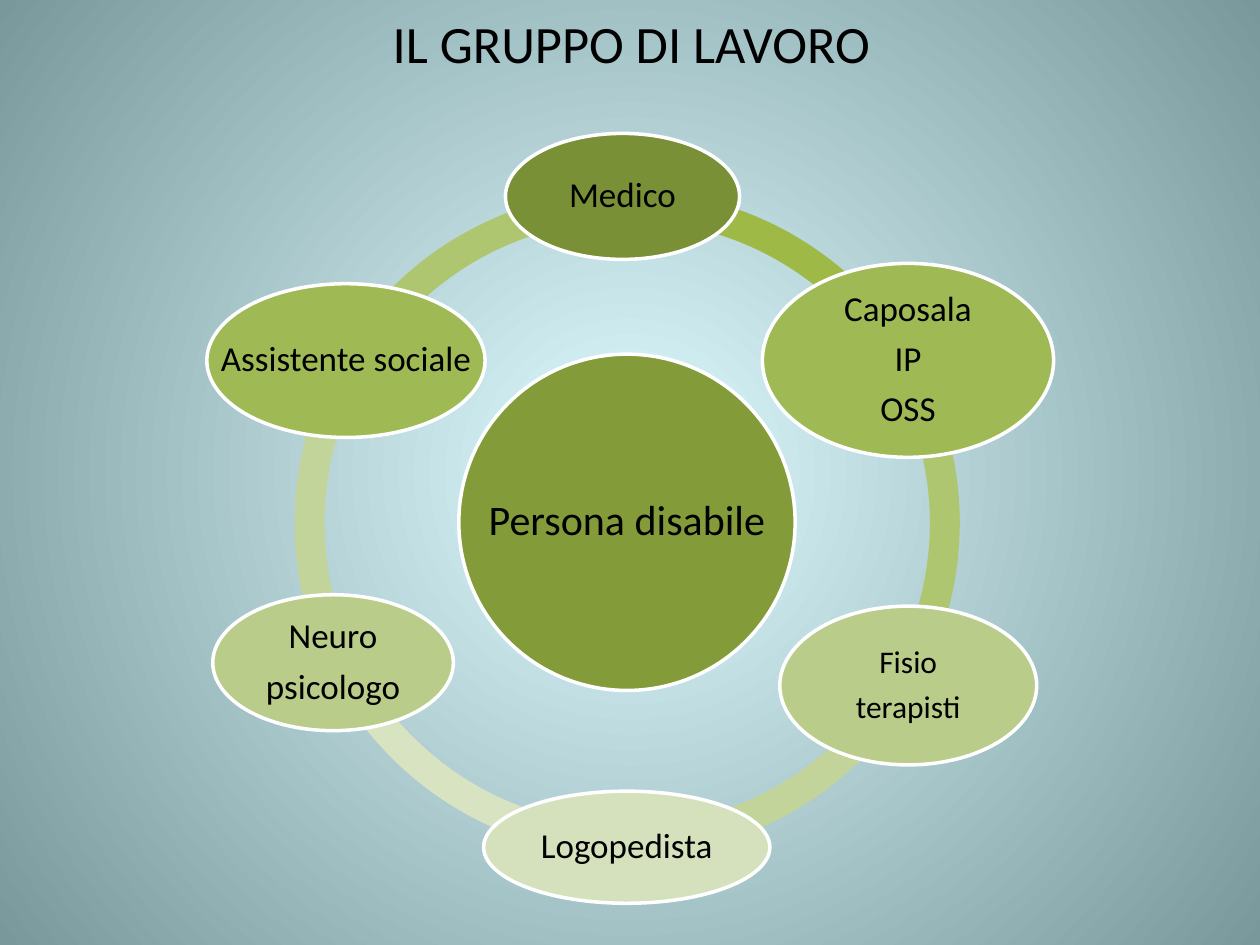
import pptx
import pptx.util
import pptx.dml.color
import pptx.enum.shapes
import pptx.enum.text
import pptx.oxml
import pptx.oxml.ns
from pptx.util import Cm

COLOURS = {
    "text": "000000", "outline": "FFFFFF",
    "glow": "DEFBFF", "edge": "79989C",
    "centre": "849B3A", "dark": "7A9036", "medium": "9FBA54",
    "light": "B9CC89", "pale": "D5E1BD",
    "arc1": "9EB946", "arc2": "AFC670", "arc3": "C3D49A", "arc4": "D8E3C2",
}
FRAME_FORMAT = {
    "margin_left": Cm(0.08), "margin_right": Cm(0.08),
    "margin_top": Cm(0.08), "margin_bottom": Cm(0.08),
    "vertical_anchor": pptx.enum.text.MSO_ANCHOR.MIDDLE,
    "word_wrap": False,
}
SHAPES = pptx.enum.shapes.MSO_SHAPE


def colour(name):
    return pptx.dml.color.RGBColor.from_string(COLOURS[name])


def apply(target, values):
    for name, value in values.items():
        setattr(target, name, value)


class GroupSlide:
    def __init__(self, page, font="Calibri"):
        self.page = page
        self.font = font

    def background(self):
        fill = self.page.background.fill
        fill.gradient()
        for stop, name in zip(fill.gradient_stops, ("glow", "edge")):
            stop.color.rgb = colour(name)
        # Turn the linear gradient into a circular one
        gradient = self.page.background._cSld.find(".//" + pptx.oxml.ns.qn("a:gradFill"))
        gradient.remove(gradient.find(pptx.oxml.ns.qn("a:lin")))
        gradient.append(pptx.oxml.parse_xml(
            f'<a:path {pptx.oxml.ns.nsdecls("a")} path="circle">'
            '<a:fillToRect l="50000" t="50000" r="50000" b="50000"/></a:path>'))

    def fill_text(self, frame, lines, size, para_format):
        apply(frame, FRAME_FORMAT)
        frame.text = "\n".join(lines)
        for para in frame.paragraphs:
            apply(para, {"alignment": pptx.enum.text.PP_ALIGN.CENTER, **para_format})
            for span in para.runs:
                apply(span.font, {"name": self.font, "size": pptx.util.Pt(size)})
                span.font.color.rgb = colour("text")

    def title(self, text, left, top, width, height):
        box = self.page.shapes.title
        apply(box, {"left": Cm(left), "top": Cm(top),
                    "width": Cm(width), "height": Cm(height)})
        self.fill_text(box.text_frame, [text], 30, {})

    def shape(self, kind, fill, left, top, width, height):
        shape = self.page.shapes.add_shape(kind, Cm(left), Cm(top), Cm(width), Cm(height))
        shape.shadow.inherit = False
        shape.fill.solid()
        shape.fill.fore_color.rgb = colour(fill)
        shape.line.fill.background()
        return shape

    def arc(self, fill, start, end, left, top, size):
        arc = self.shape(SHAPES.BLOCK_ARC, fill, left, top, size, size)
        for index, value in enumerate((start, end, 0.045)):
            arc.adjustments[index] = value

    def ellipse(self, lines, size, fill, *place):
        ellipse = self.shape(SHAPES.OVAL, fill, *place)
        ellipse.line.color.rgb = colour("outline")
        ellipse.line.width = pptx.util.Pt(2)
        self.fill_text(ellipse.text_frame, lines, size,
                       {"line_spacing": 0.9, "space_after": pptx.util.Pt(size * 0.35)})


def main():
    deck = pptx.Presentation()
    deck.slide_width, deck.slide_height = Cm(25.4), Cm(19.05)
    slide = GroupSlide(deck.slides.add_slide(deck.slide_layouts[5]))
    slide.background()
    slide.title("IL GRUPPO DI LAVORO", 1.3, 0, 22.86, 1.73)

    # Ring: six arcs clockwise from the top, 36 units (60 degrees) each
    ring = ["arc1", "arc2", "arc3", "arc4", "arc3", "arc2"]
    for index, fill in enumerate(ring):
        start = (162 + 36 * index) % 216
        slide.arc(fill, start, (start + 36) % 216, 5.94, 3.84, 13.41)

    # Person at the centre, then the team clockwise
    members = [
        (["Persona disabile"], 24, "centre", 9.25, 7.14, 6.78, 6.78),
        (["Medico"], 20, "dark", 10.19, 2.69, 4.72, 2.54),
        (["Caposala", "IP", "OSS"], 20, "medium", 15.37, 5.31, 5.87, 3.91),
        (["Fisio", "terapisti"], 18, "light", 15.72, 12.22, 5.18, 3.2),
        (["Logopedista"], 20, "pale", 9.75, 15.95, 5.77, 2.26),
        (["Neuro", "psicologo"], 20, "light", 4.29, 11.99, 4.85, 2.74),
        (["Assistente sociale"], 20, "medium", 4.17, 5.72, 5.61, 3.1),
    ]
    for member in members:
        slide.ellipse(*member)

    deck.save("out.pptx")


if __name__ == "__main__":
    main()
